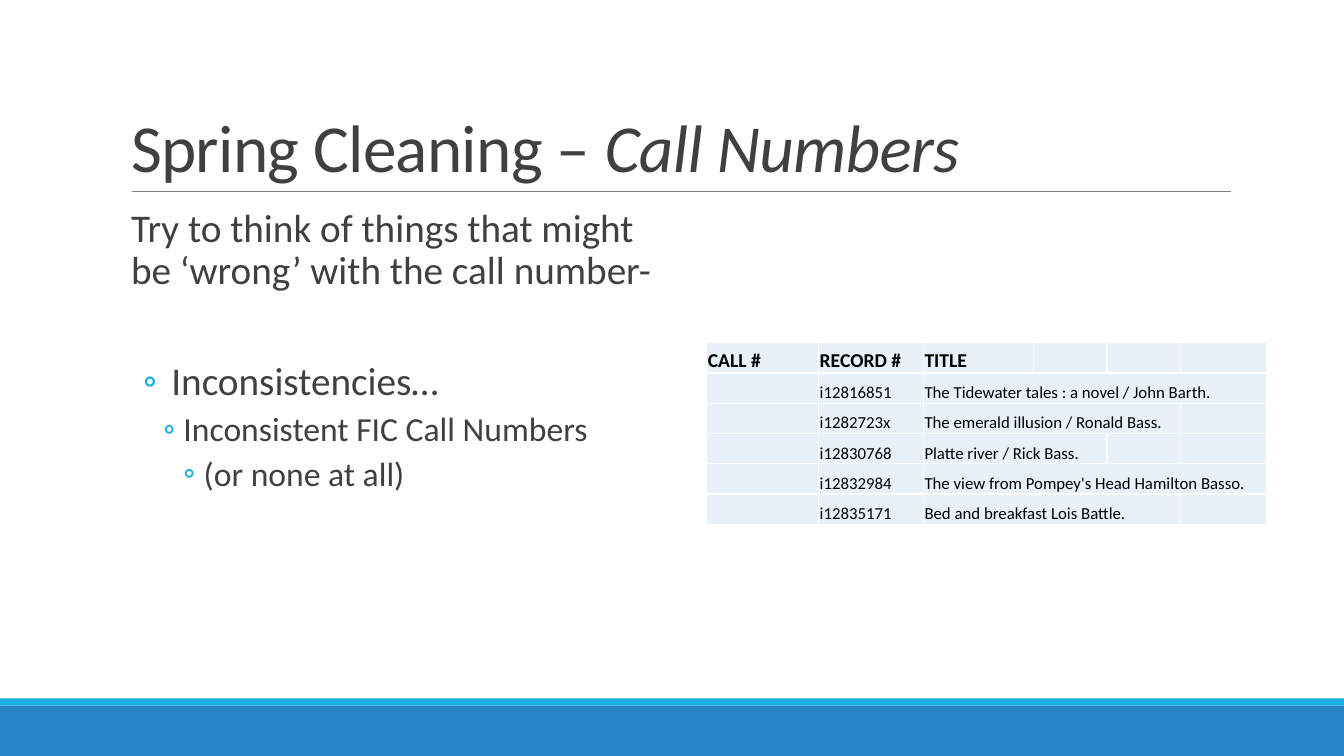
from dataclasses import dataclass
from typing import Any

from lxml.etree import SubElement
from pptx import Presentation
from pptx.dml.color import RGBColor
from pptx.enum.shapes import MSO_CONNECTOR, MSO_SHAPE
from pptx.enum.text import MSO_ANCHOR, MSO_AUTO_SIZE, PP_ALIGN
from pptx.oxml.ns import qn
from pptx.slide import Slide
from pptx.util import Inches, Pt

FONT = "Calibri"
BLUE = RGBColor(0x26, 0x83, 0xC6)
CYAN = RGBColor(0x1C, 0xAD, 0xE4)
GRAY = RGBColor(0x80, 0x80, 0x80)
DARK = RGBColor(0x40, 0x40, 0x40)
BLACK = RGBColor(0, 0, 0)
WHITE = RGBColor(0xFF, 0xFF, 0xFF)
PALE = RGBColor(0xE8, 0xF1, 0xFA)


@dataclass(frozen=True)
class Band:
    top: float
    height: float
    color: RGBColor


@dataclass(frozen=True)
class Point:
    text: str
    size: int
    level: int
    margin: float
    hanging: float
    before: int
    after: int


@dataclass(frozen=True)
class Book:
    record: str
    title: str
    title_columns: int


BANDS = [Band(7, 0.5, BLUE), Band(6.93, 0.07, CYAN)]
POINTS = [
    Point("Try to think of things that might be ‘wrong’ with the call number-", 28, 0, 0.1, 0, 12, 2),
    Point("Inconsistencies…", 28, 1, 0.5, 0.28, 47, 4),
    Point("Inconsistent FIC Call Numbers", 24, 2, 0.62, 0.2, 2, 4),
    Point("(or none at all)", 24, 3, 0.82, 0.2, 2, 4),
]
HEADINGS = ["CALL #", "RECORD #", "TITLE"]
BOOKS = [
    Book("i12816851", "The Tidewater tales : a novel / John Barth.", 4),
    Book("i1282723x", "The emerald illusion / Ronald Bass.", 3),
    Book("i12830768", "Platte river / Rick Bass.", 2),
    Book("i12832984", "The view from Pompey's Head Hamilton Basso.", 4),
    Book("i12835171", "Bed and breakfast Lois Battle.", 3),
]
COLUMN_WIDTHS = [1.11, 1.04, 1.09, 0.73, 0.73, 0.85]
ROW_HEIGHT = 0.3
TITLE_COLUMN = 2


def apply(target: Any, formats: dict[str, Any]) -> None:
    for name, value in formats.items():
        setattr(target, name, value)


def add_run(paragraph: Any, text: str, size: int, color: RGBColor, **formats: Any) -> Any:
    run = paragraph.add_run()
    run.text = text
    apply(run.font, {"name": FONT, "size": Pt(size), **formats})
    run.font.color.rgb = color
    return run


def add_band(slide: Slide, band: Band) -> None:
    bar = slide.shapes.add_shape(
        MSO_SHAPE.RECTANGLE, 0, Inches(band.top), Inches(13.33), Inches(band.height))
    bar.shadow.inherit = False
    bar.fill.solid()
    bar.fill.fore_color.rgb = band.color
    bar.line.fill.background()


def add_title_rule(slide: Slide) -> None:
    rule = slide.shapes.add_connector(
        MSO_CONNECTOR.STRAIGHT, Inches(1.31), Inches(1.9), Inches(12.21), Inches(1.9))
    rule.line.color.rgb = GRAY
    rule.line.width = Pt(0.5)
    SubElement(rule._element.spPr, qn("a:effectLst"))


def fill_title(slide: Slide) -> None:
    title = slide.shapes.title
    apply(title, {"left": Inches(1.2), "top": Inches(0.31),
                  "width": Inches(11), "height": Inches(1.59)})
    apply(title.text_frame, {"vertical_anchor": MSO_ANCHOR.BOTTOM, "word_wrap": True,
                             "auto_size": MSO_AUTO_SIZE.NONE})
    heading = title.text_frame.paragraphs[0]
    apply(heading, {"alignment": PP_ALIGN.LEFT, "line_spacing": 0.85})
    for text, italic in (("Spring Cleaning – ", False), ("Call Numbers", True)):
        run = add_run(heading, text, 48, DARK, italic=italic)
        run.font._element.set("spc", "-50")


def add_points(slide: Slide) -> None:
    frame = slide.shapes.add_textbox(
        Inches(1.2), Inches(2.02), Inches(5.4), Inches(4.4)).text_frame
    apply(frame, {"word_wrap": True, "margin_left": 0, "margin_right": 0,
                  "margin_top": Inches(0.05), "margin_bottom": Inches(0.05)})
    for index, point in enumerate(POINTS):
        paragraph = frame.add_paragraph() if index else frame.paragraphs[0]
        apply(paragraph, {"level": point.level, "line_spacing": 0.9,
                          "space_before": Pt(point.before), "space_after": Pt(point.after)})
        properties = paragraph._p.get_or_add_pPr()
        properties.set("marL", str(Inches(point.margin)))
        properties.set("indent", str(-Inches(point.hanging)))
        if point.level:
            bullet_color = SubElement(properties, qn("a:buClr"))
            SubElement(bullet_color, qn("a:srgbClr"), val=str(CYAN))
            SubElement(properties, qn("a:buFont"), typeface=FONT)
            SubElement(properties, qn("a:buChar"), char="◦")
        add_run(paragraph, point.text, point.size, DARK)


def format_cell(cell: Any) -> None:
    """Set margins, white borders, pale fill and a small size for empty text."""
    apply(cell, {"vertical_anchor": MSO_ANCHOR.BOTTOM, "margin_left": Inches(0.01),
                 "margin_right": Inches(0.01), "margin_top": Inches(0.01), "margin_bottom": 0})
    properties = cell._tc.get_or_add_tcPr()
    for side in ("lnL", "lnR", "lnT", "lnB"):
        border = SubElement(properties, qn(f"a:{side}"), w=str(Pt(1)))
        border_fill = SubElement(border, qn("a:solidFill"))
        SubElement(border_fill, qn("a:srgbClr"), val=str(WHITE))
    cell.fill.solid()
    cell.fill.fore_color.rgb = PALE
    SubElement(cell.text_frame.paragraphs[0]._p, qn("a:endParaRPr"), sz="1200")


def add_book_table(slide: Slide) -> None:
    row_count = len(BOOKS) + 1
    table = slide.shapes.add_table(
        row_count, len(COLUMN_WIDTHS), Inches(7.01), Inches(3.4),
        Inches(sum(COLUMN_WIDTHS)), Inches(ROW_HEIGHT * row_count)).table
    apply(table, {"first_row": False, "horz_banding": False})
    for column, width in zip(table.columns, COLUMN_WIDTHS):
        column.width = Inches(width)
    for row in table.rows:
        row.height = Inches(ROW_HEIGHT)
    for cell in table.iter_cells():
        format_cell(cell)
    for column, heading in enumerate(HEADINGS):
        add_run(table.cell(0, column).text_frame.paragraphs[0], heading, 14, BLACK, bold=True)
    for row, book in enumerate(BOOKS, start=1):
        title_cell = table.cell(row, TITLE_COLUMN)
        title_cell.merge(table.cell(row, TITLE_COLUMN + book.title_columns - 1))
        for cell, text in ((table.cell(row, 1), book.record), (title_cell, book.title)):
            add_run(cell.text_frame.paragraphs[0], text, 12, BLACK, bold=False)


def main() -> None:
    presentation = Presentation()
    apply(presentation, {"slide_width": Inches(13.33), "slide_height": Inches(7.5)})
    slide = presentation.slides.add_slide(presentation.slide_layouts.get_by_name("Title Only"))
    for band in BANDS:
        add_band(slide, band)
    add_title_rule(slide)
    fill_title(slide)
    add_points(slide)
    add_book_table(slide)
    presentation.save("out.pptx")


if __name__ == "__main__":
    main()
